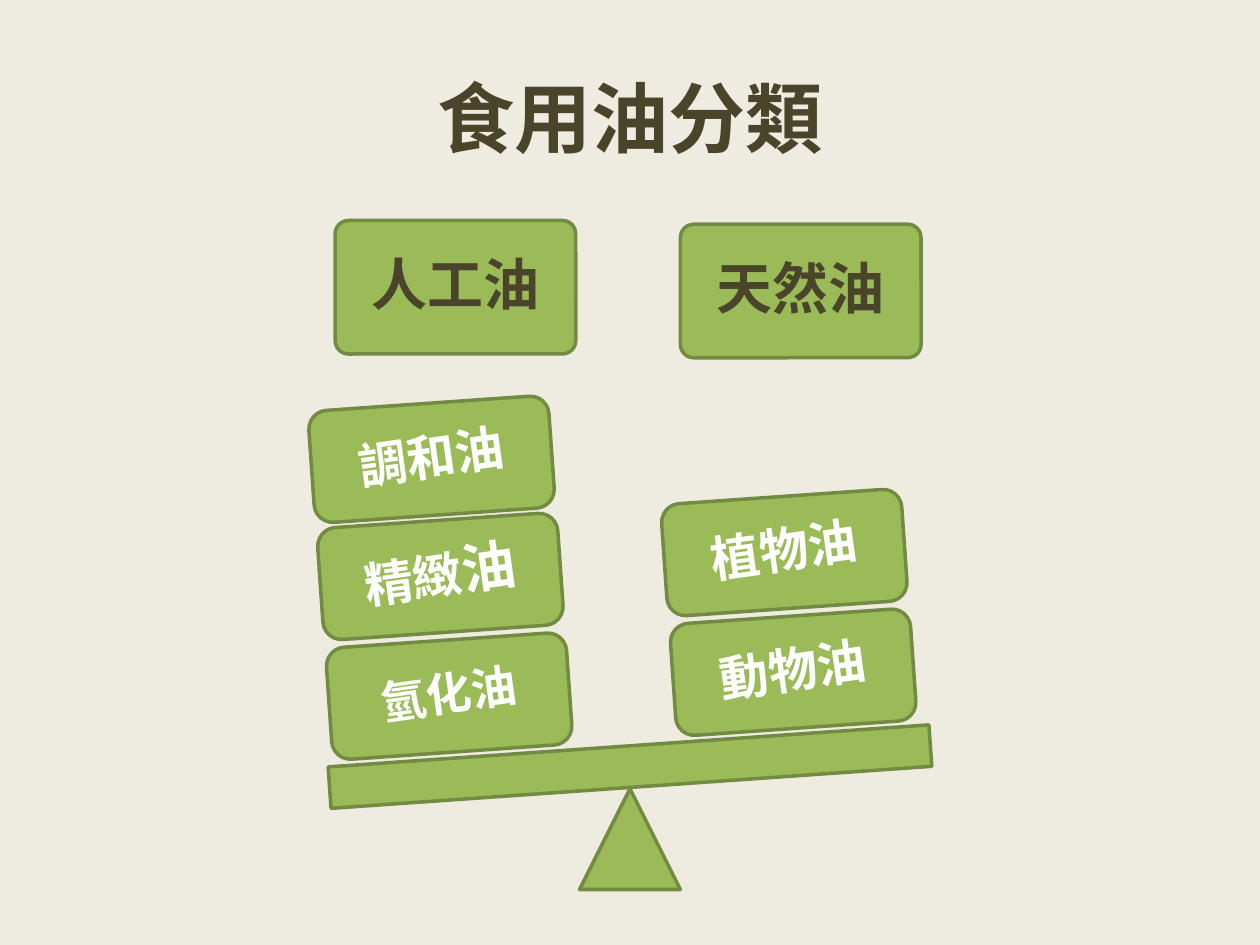
from lxml.etree import SubElement
from pptx import Presentation
from pptx.dml.color import RGBColor
from pptx.enum.shapes import MSO_SHAPE as SHAPE
from pptx.enum.text import MSO_ANCHOR as ANCHOR, PP_ALIGN as ALIGN
from pptx.oxml.ns import qn
from pptx.util import Inches, Pt

BACKGROUND, GREEN, OUTLINE = "EEECE1", "9BBB59", "738A42"
BROWN, WHITE = "4A452A", "FFFFFF"
BLOCK_WIDTH = 1.91
HEADER_HEIGHT, BLOCK_HEIGHT = 1.06, 0.89
TILT, TEXT_TILT = -4, -8


def color(hex_value):
    return RGBColor.from_string(hex_value)


class BalanceSlide:
    font_name = "Noto Sans CJK SC"

    def __init__(self, presentation):
        self.slide = presentation.slides.add_slide(presentation.slide_layouts[5])
        fill = self.slide.background.fill
        fill.solid()
        fill.fore_color.rgb = color(BACKGROUND)

    def add_runs(self, paragraph, runs, text_color):
        """Add (text, size) runs to a centred paragraph."""
        paragraph.alignment = ALIGN.CENTER
        for text, size in runs:
            run = paragraph.add_run()
            run.text = text
            style = {"name": self.font_name, "size": Pt(size), "bold": True}
            for key, value in style.items():
                setattr(run.font, key, value)
            run.font.color.rgb = color(text_color)
            east_asian = SubElement(run.font._element, qn("a:ea"))
            east_asian.set("typeface", self.font_name)

    def title(self, text, box):
        title = self.slide.shapes.title
        title.left, title.top, title.width, title.height = map(Inches, box)
        title.text_frame.vertical_anchor = ANCHOR.MIDDLE
        self.add_runs(title.text_frame.paragraphs[0], [(text, 44)], BROWN)

    def shape(self, kind, box, rotation=0, corner=None):
        shape = self.slide.shapes.add_shape(kind, *map(Inches, box))
        shape.shadow.inherit = False
        shape.rotation = rotation
        shape.fill.solid()
        shape.fill.fore_color.rgb = color(GREEN)
        shape.line.color.rgb = color(OUTLINE)
        shape.line.width = Pt(2)
        if corner is not None:
            shape.adjustments[0] = corner

    def label(self, runs, box, text_color, inset, rotation=0):
        label = self.slide.shapes.add_textbox(*map(Inches, box))
        label.rotation = rotation
        frame = label.text_frame
        frame.word_wrap = True
        frame.vertical_anchor = ANCHOR.MIDDLE
        for side in ("left", "top", "right", "bottom"):
            setattr(frame, f"margin_{side}", Inches(inset))
        paragraph = frame.paragraphs[0]
        paragraph.line_spacing = 0.9
        # Space after as a share of the text size
        after = SubElement(paragraph._p.get_or_add_pPr(), qn("a:spcAft"))
        SubElement(after, qn("a:spcPct")).set("val", "35000")
        self.add_runs(paragraph, runs, text_color)

    def header(self, text, left, top):
        box = (left, top, BLOCK_WIDTH, HEADER_HEIGHT)
        self.shape(SHAPE.ROUNDED_RECTANGLE, box, corner=0.1)
        self.label([(text, 32)], box, BROWN, 0.13)

    def block(self, runs, left, top):
        box = (left, top, BLOCK_WIDTH, BLOCK_HEIGHT)
        inset = 0.11 if runs[0][1] < 28 else 0.12
        self.shape(SHAPE.ROUNDED_RECTANGLE, box, TILT)
        self.label(runs, box, WHITE, inset, TEXT_TILT)


def main():
    presentation = Presentation()
    presentation.slide_width, presentation.slide_height = Inches(10), Inches(7.5)
    balance = BalanceSlide(presentation)

    balance.title("食用油分類", (0.5, 0.3, 9, 1.25))
    balance.header("人工油", 2.66, 1.75)
    balance.header("天然油", 5.4, 1.78)

    balance.shape(SHAPE.ISOSCELES_TRIANGLE, (4.6, 6.26, 0.8, 0.8))
    balance.shape(SHAPE.RECTANGLE, (2.61, 5.92, 4.78, 0.33), TILT)

    oils = [
        ([("氫化油", 26)], 2.61, 5.08),
        ([("精緻", 28), ("油", 31)], 2.54, 4.13),
        ([("調和油", 28)], 2.47, 3.2),
        ([("動物油", 28)], 5.34, 4.89),
        ([("植物油", 28)], 5.27, 3.94),
    ]
    for runs, left, top in oils:
        balance.block(runs, left, top)

    presentation.save("out.pptx")


if __name__ == "__main__":
    main()
